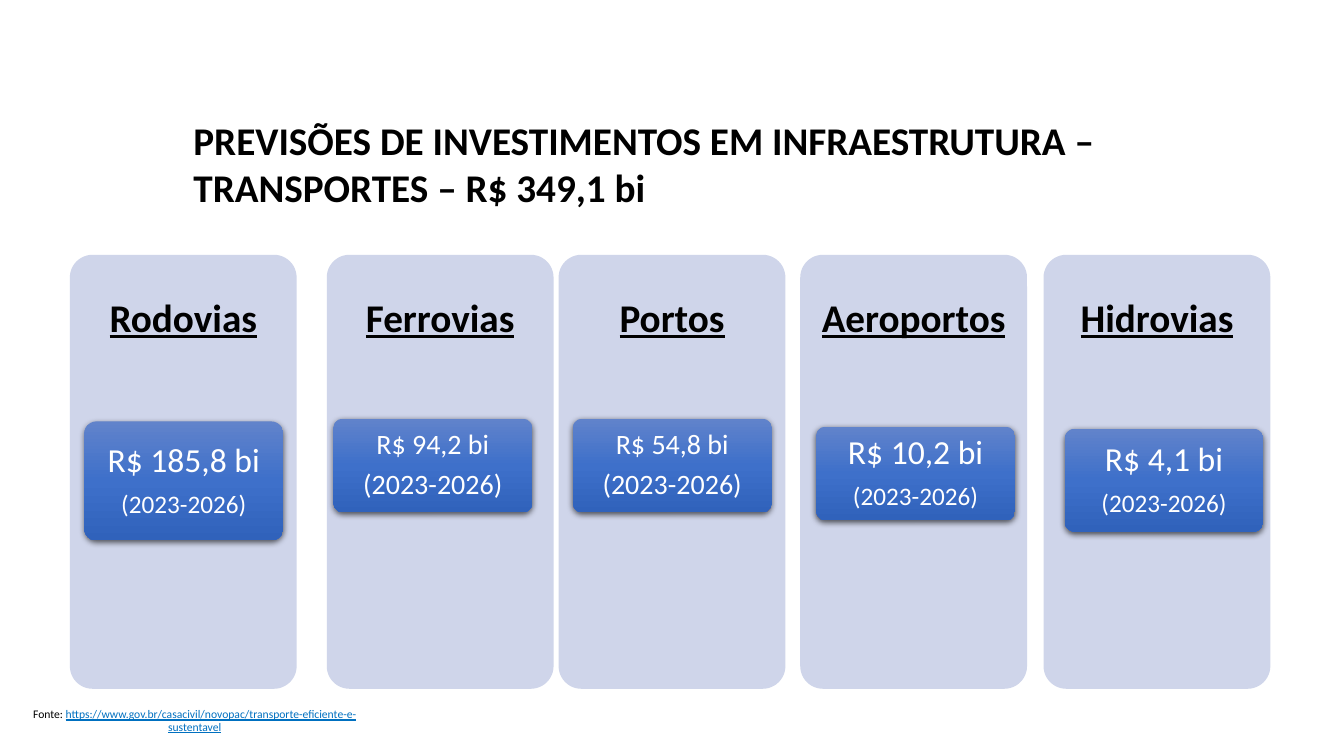
from lxml import etree
from pptx import Presentation
from pptx.dml.color import RGBColor
from pptx.enum import shapes, text
from pptx.oxml import parse_xml
from pptx.oxml.ns import qn
from pptx.util import Pt

TITLE = "PREVISÕES DE INVESTIMENTOS EM INFRAESTRUTURA – TRANSPORTES – R$ 349,1 bi"
PERIOD = "(2023-2026)"
SOURCE = ("Fonte: ", "https://www.gov.br/casacivil/novopac/transporte-eficiente-e-sustentavel")
# name, card left, amount, box (left, top, height), amount size, period size
SECTORS = [
    ("Rodovias", 49.9, "R$ 185,8 bi", (60.3, 301, 85), 24, 18),
    ("Ferrovias", 233.4, "R$ 94,2 bi", (238.2, 299, 67), 20, 20),
    ("Portos", 399, "R$ 54,8 bi", (409.2, 299, 67), 20, 20),
    ("Aeroportos", 571.6, "R$ 10,2 bi", (583, 304.7, 67), 24, 18),
    ("Hidrovias", 745.4, "R$ 4,1 bi", (760.5, 306.2, 73.6), 24, 18),
]
COLORS = {"ink": "000000", "card": "CFD5EA", "white": "FFFFFF", "link": "0070C0",
          "top": "6183CB", "mid": "3E70CA", "low": "3062BB"}
FONT = "Calibri"
CARD_TOP, CARD_W, CARD_H, HEAD_H = 182, 162, 310, 93
BOX_W = 142
A = "http://schemas.openxmlformats.org/drawingml/2006/main"


def style(r, size, color, bold=False, underline=False):
    f = r.font
    f.name, f.size, f.bold, f.underline = FONT, Pt(size), bold, underline
    f.color.rgb = RGBColor.from_string(COLORS[color])


def frame(sp, anchor, dx, dy):
    tf = sp.text_frame
    tf.word_wrap = True
    tf.auto_size = text.MSO_AUTO_SIZE.NONE
    tf.vertical_anchor = anchor
    tf.margin_left = tf.margin_right = Pt(dx)
    tf.margin_top = tf.margin_bottom = Pt(dy)
    return tf


def center(p, after):
    p.alignment = text.PP_ALIGN.CENTER
    p.line_spacing = 0.9
    p.space_after = Pt(after)


def rounded(s, *box):
    sp = s.shapes.add_shape(shapes.MSO_SHAPE.ROUNDED_RECTANGLE, *map(Pt, box))
    sp.adjustments[0] = 0.1
    sp.line.fill.background()
    sp.shadow.inherit = False
    return sp


def textbox(s, *box):
    return s.shapes.add_textbox(*map(Pt, box))


def add_gradient_and_shadow(sp):
    stops = "".join(f'<a:gs pos="{pos}"><a:srgbClr val="{COLORS[c]}"/></a:gs>'
                    for pos, c in ((0, "top"), (50000, "mid"), (100000, "low")))
    spPr = sp._element.spPr
    spPr.find(qn("a:prstGeom")).addnext(parse_xml(
        f'<a:gradFill xmlns:a="{A}" rotWithShape="1"><a:gsLst>{stops}</a:gsLst>'
        '<a:lin ang="5400000" scaled="0"/></a:gradFill>'))
    shadow = etree.SubElement(spPr.find(qn("a:effectLst")), qn("a:outerShdw"),
                              blurRad=str(Pt(4.5)), dist=str(Pt(1.5)), dir="5400000",
                              algn="ctr", rotWithShape="0")
    clr = etree.SubElement(shadow, qn("a:srgbClr"), val=COLORS["ink"])
    etree.SubElement(clr, qn("a:alpha"), val="63000")


def add_sector(s, name, left, amount, box, amount_size, period_size):
    card = rounded(s, left, CARD_TOP, CARD_W, CARD_H)
    card.fill.solid()
    card.fill.fore_color.rgb = RGBColor.from_string(COLORS["card"])

    head = textbox(s, left, CARD_TOP, CARD_W, HEAD_H)
    tf = frame(head, text.MSO_ANCHOR.MIDDLE, 8.4, 8.4)
    tf.text = name
    p = tf.paragraphs[0]
    center(p, 9.8)
    style(p.runs[0], 28, "ink", True, True)

    x, y, h = box
    value = rounded(s, x, y, BOX_W, h)
    add_gradient_and_shadow(value)
    tf = frame(value, text.MSO_ANCHOR.MIDDLE, 5, 3)
    tf.text = f"{amount}\n{PERIOD}"
    for p, size in zip(tf.paragraphs, (amount_size, period_size)):
        center(p, 0.35 * size)
        style(p.runs[0], size, "white")


def main():
    prs = Presentation()
    prs.slide_width, prs.slide_height = Pt(960), Pt(540)
    s = prs.slides.add_slide(prs.slide_layouts[5])

    title = s.shapes.title
    title.left, title.top, title.width, title.height = map(Pt, (131, 79.2, 673.2, 75))
    tf = frame(title, text.MSO_ANCHOR.TOP, 7.2, 3.6)
    tf.text = TITLE
    p = tf.paragraphs[0]
    p.alignment = text.PP_ALIGN.LEFT
    style(p.runs[0], 28, "ink", True)

    for sector in SECTORS:
        add_sector(s, *sector)

    footer = textbox(s, 0, 510.5, 278, 17.3)
    p = frame(footer, text.MSO_ANCHOR.BOTTOM, 7.2, 3.6).paragraphs[0]
    center(p, 5.5)
    for part, color, underline in zip(SOURCE, ("ink", "link"), (False, True)):
        r = p.add_run()
        r.text = part
        style(r, 8.3, color, underline=underline)

    prs.save("out.pptx")


if __name__ == "__main__":
    main()
